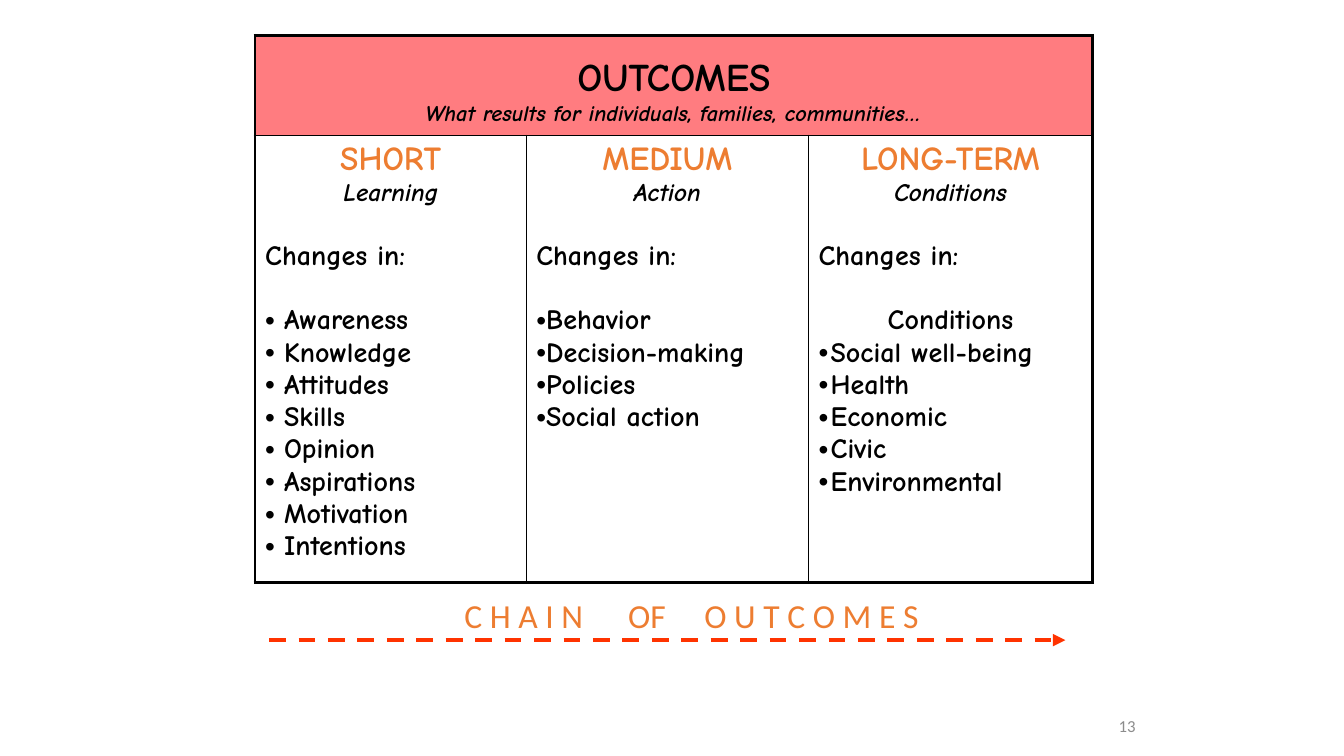
from lxml.etree import SubElement
from pptx import Presentation
from pptx.dml.color import RGBColor
from pptx.enum.dml import MSO_LINE
from pptx.enum.shapes import MSO_CONNECTOR
from pptx.enum.text import MSO_ANCHOR, PP_ALIGN as Align
from pptx.oxml.ns import qn
from pptx.util import Pt

# Heading, subheading, centred lead-in, bulleted items, hanging indent
OUTCOMES = [
    ("SHORT", "Learning", None,
     ["Awareness", "Knowledge", "Attitudes", "Skills",
      "Opinion", "Aspirations", "Motivation", "Intentions"], 13.5),
    ("MEDIUM", "Action", None,
     ["Behavior", "Decision-making", "Policies", "Social action"], 7),
    ("LONG-TERM", "Conditions", "Conditions",
     ["Social well-being", "Health", "Economic", "Civic", "Environmental"], 8.64),
]
COLUMN_WIDTHS = [193.7, 201.6, 203]
ROW_HEIGHTS = [69, 308]
BLANK_LINE = 23


def color(hex_string):
    return RGBColor.from_string(hex_string)


class OutcomeSlide:
    table_font = "Comic Neue"
    plain_font = "Calibri"
    black, orange, red = "000000", "ED7D31", "FF3300"
    pink, gray = "FF7C80", "8C8C8C"
    outer_line, inner_line = 2.25, 1

    def __init__(self, presentation):
        self.slide = presentation.slides.add_slide(presentation.slide_layouts[6])

    def add_text(self, frame, text, size=20, font=table_font, fill=black, bold=True,
                 italic=False, align=Align.LEFT, before=0, bullet_indent=None, tabs=()):
        """Fill the frame's empty first paragraph, or append a new one."""
        paragraph = frame.paragraphs[0]
        if paragraph.runs:
            paragraph = frame.add_paragraph()
        paragraph.alignment = align
        paragraph.space_before = Pt(before)
        run = paragraph.add_run()
        run.text = text
        run.font.name, run.font.size = font, Pt(size)
        run.font.bold, run.font.italic = bold, italic
        run.font.color.rgb = color(fill)
        properties = paragraph._p.get_or_add_pPr()
        if bullet_indent:
            properties.set("marL", str(Pt(bullet_indent)))
            properties.set("indent", str(-Pt(bullet_indent)))
            SubElement(properties, qn("a:buFont"), typeface="Arial")
            SubElement(properties, qn("a:buChar"), char="•")
        if tabs:
            tab_list = SubElement(properties, qn("a:tabLst"))
            for position in tabs:
                SubElement(tab_list, qn("a:tab"), pos=str(Pt(position)), algn="l")

    def text_box(self, left, top, width, height, text, inset=7.2,
                 anchor=MSO_ANCHOR.TOP, **text_format):
        frame = self.slide.shapes.add_textbox(
            Pt(left), Pt(top), Pt(width), Pt(height)).text_frame
        frame.word_wrap = True
        frame.margin_left = Pt(inset)
        frame.vertical_anchor = anchor
        self.add_text(frame, text, font=self.plain_font, bold=False, **text_format)

    def border(self, cell, row, column):
        """Draw thick lines on the table's outer edge and thin ones inside."""
        outer = {"L": column == 0, "R": column == len(COLUMN_WIDTHS) - 1,
                 "T": row == 0, "B": row == len(ROW_HEIGHTS) - 1}
        if row == 0:
            outer["L"] = outer["R"] = True
        properties = cell._tc.get_or_add_tcPr()
        for side, is_outer in outer.items():
            width = self.outer_line if is_outer else self.inner_line
            line = SubElement(properties, qn(f"a:ln{side}"), w=str(Pt(width)))
            fill = SubElement(line, qn("a:solidFill"))
            SubElement(fill, qn("a:srgbClr"), val=self.black)

    def outcome_table(self, left, top):
        table = self.slide.shapes.add_table(
            len(ROW_HEIGHTS), len(COLUMN_WIDTHS), Pt(left), Pt(top),
            Pt(sum(COLUMN_WIDTHS)), Pt(sum(ROW_HEIGHTS))).table
        table.first_row = table.horz_banding = False
        for column, width in zip(table.columns, COLUMN_WIDTHS):
            column.width = Pt(width)
        for row, height in zip(table.rows, ROW_HEIGHTS):
            row.height = Pt(height)
        header = table.cell(0, 0)
        header.merge(table.cell(0, len(COLUMN_WIDTHS) - 1))
        for row in range(len(ROW_HEIGHTS)):
            for column in range(len(COLUMN_WIDTHS)):
                cell = table.cell(row, column)
                self.border(cell, row, column)
                if row == 0:
                    cell.fill.solid()
                    cell.fill.fore_color.rgb = color(self.pink)
                else:
                    cell.fill.background()
        header.margin_top = Pt(15)
        self.add_text(header.text_frame, "OUTCOMES", size=28, align=Align.CENTER)
        self.add_text(header.text_frame,
                      "What results for individuals, families, communities…",
                      size=16, italic=True, align=Align.CENTER)
        for column, outcome in enumerate(OUTCOMES):
            self.outcome_cell(table.cell(1, column).text_frame, *outcome)

    def outcome_cell(self, frame, heading, subheading, lead_in, items, indent):
        self.add_text(frame, heading, size=24, fill=self.orange, align=Align.CENTER)
        self.add_text(frame, subheading, size=18, italic=True, align=Align.CENTER)
        self.add_text(frame, "Changes in:", before=BLANK_LINE)
        gap = BLANK_LINE
        if lead_in:
            self.add_text(frame, lead_in, align=Align.CENTER, before=gap)
            gap = 0
        for item in items:
            self.add_text(frame, item, before=gap, bullet_indent=indent)
            gap = 0

    def dashed_arrow(self, left, right, y):
        arrow = self.slide.shapes.add_connector(
            MSO_CONNECTOR.STRAIGHT, Pt(left), Pt(y), Pt(right), Pt(y))
        arrow.line.color.rgb = color(self.red)
        arrow.line.width = Pt(3)
        arrow.line.dash_style = MSO_LINE.DASH
        properties = arrow._element.spPr
        SubElement(properties.find(qn("a:ln")), qn("a:tailEnd"), type="triangle")
        SubElement(properties, qn("a:effectLst"))


def main():
    presentation = Presentation()
    presentation.slide_width, presentation.slide_height = Pt(960), Pt(540)
    outcomes = OutcomeSlide(presentation)
    outcomes.text_box(792, 500.4, 48.2, 36, "13", size=12,
                      fill=outcomes.gray, anchor=MSO_ANCHOR.MIDDLE)
    outcomes.outcome_table(182.2, 25.2)
    outcomes.text_box(221, 421.2, 554.4, 36, "C H A I N\tOF\tO U T C O M E S",
                      inset=110.7, size=24, fill=outcomes.orange, tabs=(117, 171.5))
    outcomes.dashed_arrow(192.2, 761, 457.2)
    presentation.save("out.pptx")


if __name__ == "__main__":
    main()
